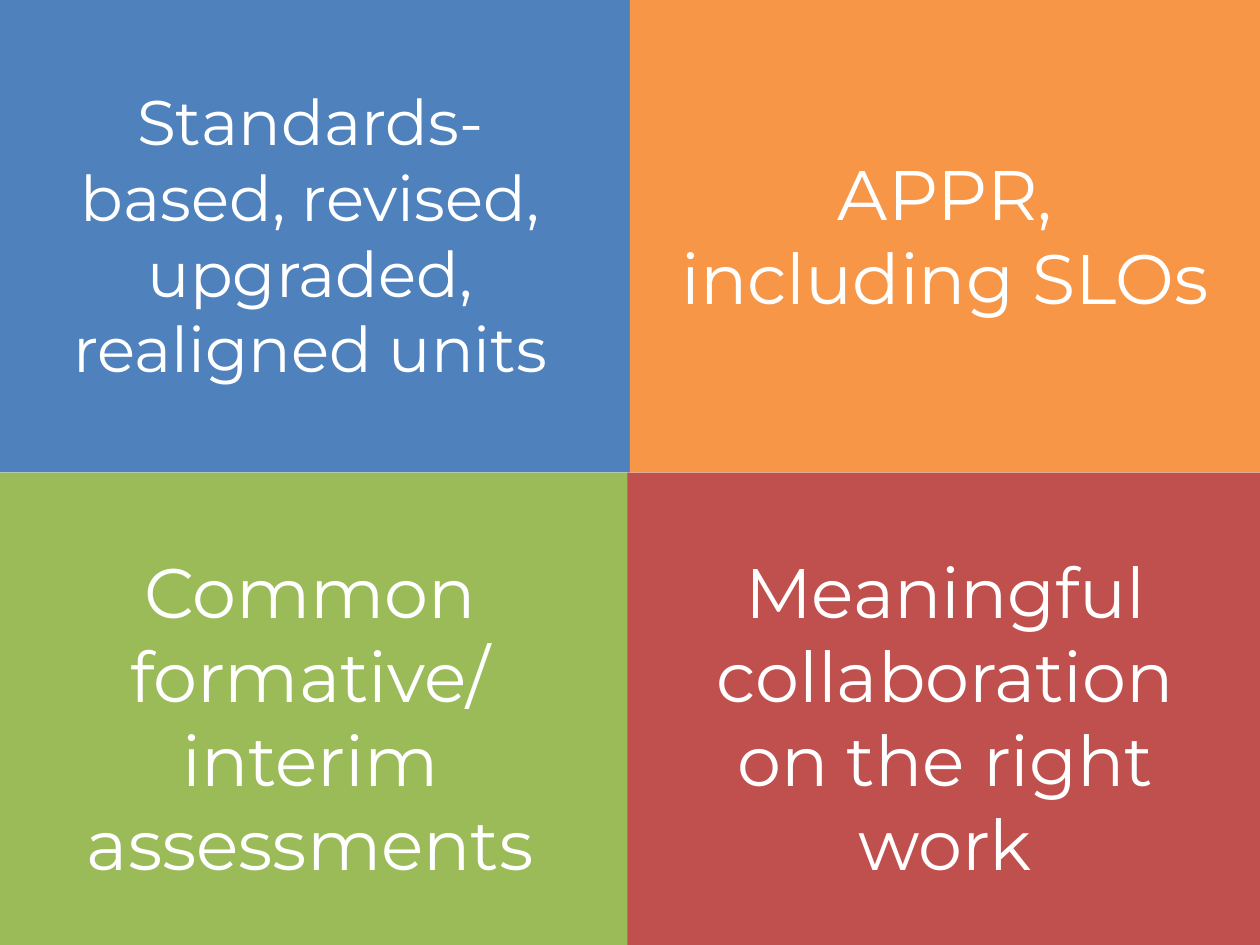
"""Build a slide of four coloured quadrants, each with a centred statement."""
from dataclasses import dataclass

from pptx import Presentation
from pptx.dml.color import RGBColor
from pptx.enum.shapes import MSO_SHAPE
from pptx.enum.text import MSO_ANCHOR, MSO_AUTO_SIZE, PP_ALIGN
from pptx.slide import Slide
from pptx.util import Cm, Length, Pt

RECTANGLE = MSO_SHAPE.RECTANGLE
MIDDLE = MSO_ANCHOR.MIDDLE
GROW = MSO_AUTO_SIZE.SHAPE_TO_FIT_TEXT
CENTER = PP_ALIGN.CENTER


@dataclass(frozen=True)
class Theme:
    font: str = "Montserrat"
    text: RGBColor = RGBColor(0xFF, 0xFF, 0xFF)
    blue: RGBColor = RGBColor(0x4F, 0x81, 0xBD)
    orange: RGBColor = RGBColor(0xF7, 0x96, 0x46)
    green: RGBColor = RGBColor(0x9B, 0xBB, 0x59)
    red: RGBColor = RGBColor(0xC0, 0x50, 0x4D)
    large: Length = Pt(40)
    medium: Length = Pt(36)


@dataclass(frozen=True)
class Quadrant:
    statement: str
    color: RGBColor
    size: Length
    left: Length
    top: Length
    width: Length
    text_left: Length
    text_top: Length
    text_height: Length


THEME = Theme()
SLIDE_WIDTH, SLIDE_HEIGHT = Cm(25.4), Cm(19.05)
HALF_WIDTH, HALF_HEIGHT = Cm(12.7), SLIDE_HEIGHT // 2
LOWER_SPLIT = Cm(12.65)
TEXT_WIDTH = Cm(11.23)
LEFT_TEXT, RIGHT_TEXT = Cm(0.64), Cm(13.44)
LOWER_TEXT, LOWER_TEXT_HEIGHT = Cm(10.9), Cm(7.09)

QUADRANTS = (
    Quadrant("Standards-based, revised, upgraded, realigned units", THEME.blue, THEME.medium,
             Cm(0), Cm(0), HALF_WIDTH, LEFT_TEXT, Cm(1.52), Cm(6.4)),
    Quadrant("APPR, including SLOs", THEME.orange, THEME.large,
             HALF_WIDTH, Cm(0), HALF_WIDTH, RIGHT_TEXT, Cm(2.03), Cm(5.38)),
    Quadrant("Common formative/\ninterim assessments", THEME.green, THEME.large,
             Cm(-0.03), HALF_HEIGHT, HALF_WIDTH, LEFT_TEXT, LOWER_TEXT, LOWER_TEXT_HEIGHT),
    Quadrant("Meaningful collaboration on the right work", THEME.red, THEME.large,
             LOWER_SPLIT, HALF_HEIGHT, SLIDE_WIDTH - LOWER_SPLIT,
             RIGHT_TEXT, LOWER_TEXT, LOWER_TEXT_HEIGHT),
)


def draw_background(slide: Slide, quadrant: Quadrant) -> None:
    """Fill the quadrant with its colour."""
    background = slide.shapes.add_shape(
        RECTANGLE, quadrant.left, quadrant.top, quadrant.width, HALF_HEIGHT)
    background.shadow.inherit = False
    background.fill.solid()
    background.fill.fore_color.rgb = quadrant.color
    background.line.fill.background()


def draw_statement(slide: Slide, quadrant: Quadrant) -> None:
    """Write the statement centred in its quadrant."""
    statement = slide.shapes.add_textbox(
        quadrant.text_left, quadrant.text_top, TEXT_WIDTH, quadrant.text_height)
    frame = statement.text_frame
    frame.word_wrap = True
    frame.auto_size = GROW
    frame.vertical_anchor = MIDDLE
    paragraph = frame.paragraphs[0]
    paragraph.text = quadrant.statement
    paragraph.alignment = CENTER
    for run in paragraph.runs:
        run.font.name = THEME.font
        run.font.size = quadrant.size
        run.font.color.rgb = THEME.text


def main() -> None:
    """Create the presentation and save it."""
    presentation = Presentation()
    presentation.slide_width = SLIDE_WIDTH
    presentation.slide_height = SLIDE_HEIGHT
    slide = presentation.slides.add_slide(presentation.slide_layouts[6])
    for quadrant in QUADRANTS:
        draw_background(slide, quadrant)
    for quadrant in QUADRANTS:
        draw_statement(slide, quadrant)
    presentation.save("out.pptx")


if __name__ == "__main__":
    main()
